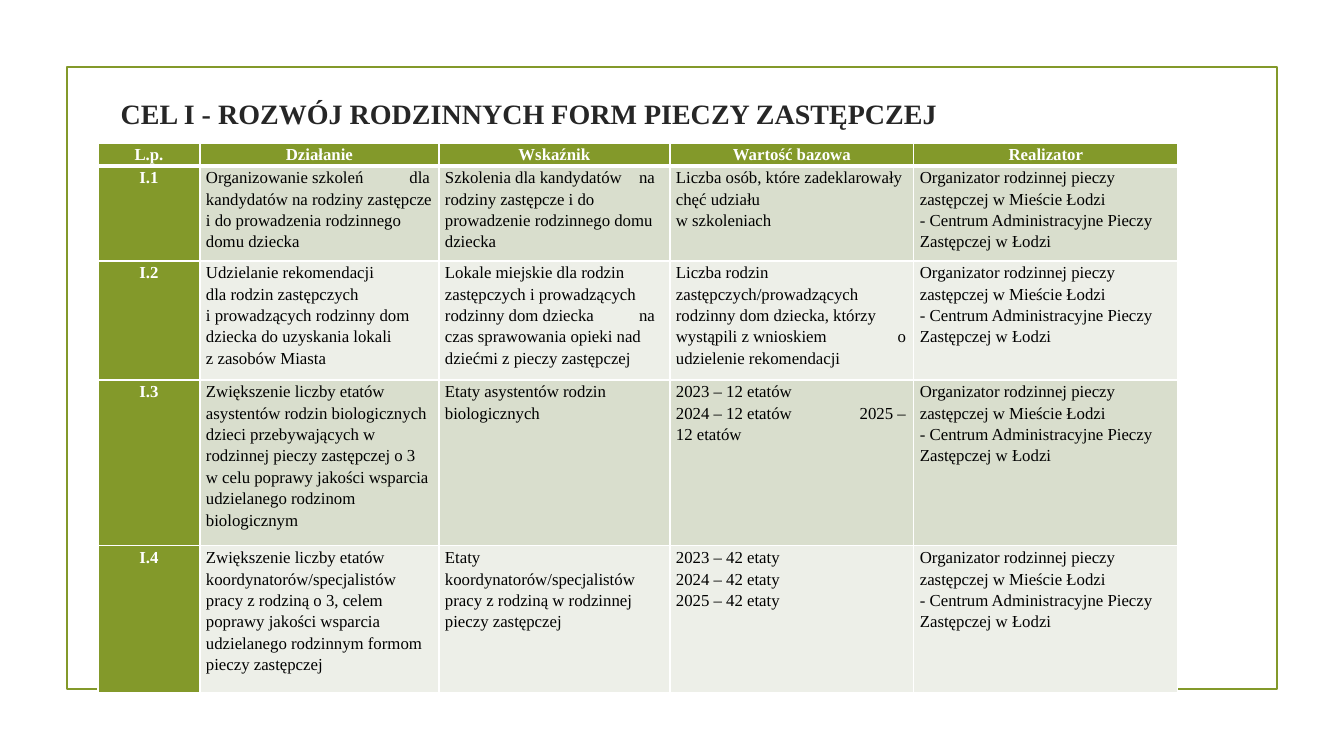
from lxml import etree
from pptx import Presentation
from pptx.dml.color import RGBColor
from pptx.enum import shapes, text
from pptx.oxml.ns import qn

PX = 914400 / 100.8
GREEN, WHITE = "83992A", "FFFFFF"
BANDS = ["D9DECD", "EDEFE8"]
COLS = [102, 239, 231, 244, 264]
ROWS = [23, 95, 119, 166, 147]
TABS = [0, 224, 210, 230, 0]
REALIZATOR = ("Organizator rodzinnej pieczy zastępczej w Mieście Łodzi\n"
              "- Centrum Administracyjne Pieczy Zastępczej w Łodzi")
TABLE = [
    ["L.p.", "Działanie", "Wskaźnik", "Wartość bazowa", "Realizator"],
    ["I.1",
     "Organizowanie szkoleń\tdla\nkandydatów na rodziny zastępcze i do prowadzenia rodzinnego domu dziecka",
     "Szkolenia dla kandydatów\tna\nrodziny zastępcze i do prowadzenie rodzinnego domu dziecka",
     "Liczba osób, które zadeklarowały chęć udziału\nw szkoleniach",
     REALIZATOR],
    ["I.2",
     "Udzielanie rekomendacji\ndla rodzin zastępczych\n"
     "i prowadzących rodzinny dom dziecka do uzyskania lokali\nz zasobów Miasta",
     "Lokale miejskie dla rodzin zastępczych i prowadzących rodzinny dom dziecka\tna\n"
     "czas sprawowania opieki nad dziećmi z pieczy zastępczej",
     "Liczba rodzin zastępczych/prowadzących rodzinny dom dziecka, którzy "
     "wystąpili z wnioskiem\to\nudzielenie rekomendacji",
     REALIZATOR],
    ["I.3",
     "Zwiększenie liczby etatów asystentów rodzin biologicznych dzieci przebywających w "
     "rodzinnej pieczy zastępczej o 3\nw celu poprawy jakości wsparcia udzielanego rodzinom biologicznym",
     "Etaty asystentów rodzin biologicznych",
     "2023 – 12 etatów\n2024 – 12 etatów\t2025 –\n12 etatów",
     REALIZATOR],
    ["I.4",
     "Zwiększenie liczby etatów koordynatorów/specjalistów pracy z rodziną o 3, celem "
     "poprawy jakości wsparcia udzielanego rodzinnym formom pieczy zastępczej",
     "Etaty koordynatorów/specjalistów pracy z rodziną w rodzinnej pieczy zastępczej",
     "2023 – 42 etaty\n2024 – 42 etaty\n2025 – 42 etaty",
     REALIZATOR],
]


def px(*values):
    return [round(v * PX) for v in values]


def write(tf, content, size=12, color="000000", bold=False, align=None, spacing=None, tab=0):
    """Fill a text frame, one paragraph per line, with an optional right tab stop in px."""
    for i, line in enumerate(content.split("\n")):
        p = tf.add_paragraph() if i else tf.paragraphs[0]
        if "\t" in line:
            tabs = etree.SubElement(p._p.get_or_add_pPr(), qn("a:tabLst"))
            etree.SubElement(tabs, qn("a:tab"), pos=str(px(tab)[0]), algn="r")
        p.alignment = align
        p.line_spacing = spacing
        r = p.add_run()
        r.text = line
        r.font.name, r.font.size, r.font.bold = "Times New Roman", size * 12700, bold
        r.font.color.rgb = RGBColor.from_string(color)


prs = Presentation()
prs.slide_width, prs.slide_height = px(1344, 756)
s = prs.slides.add_slide(prs.slide_layouts[5])

frame = s.shapes.add_shape(shapes.MSO_SHAPE.RECTANGLE, *px(67, 67, 1210, 622))
frame.shadow.inherit = False
frame.fill.background()
frame.line.color.rgb = RGBColor.from_string(GREEN)
frame.line.width = 15875

title = s.shapes.title
title.element.addprevious(frame.element)
title.left, title.top, title.width, title.height = px(0, 83, 1058, 60)
title.text_frame.vertical_anchor = text.MSO_ANCHOR.MIDDLE
write(title.text_frame, "CEL I - ROZWÓJ RODZINNYCH FORM PIECZY ZASTĘPCZEJ",
      size=20, color="262626", bold=True, align=text.PP_ALIGN.CENTER)

table = s.shapes.add_table(len(ROWS), len(COLS), *px(98, 143, sum(COLS), sum(ROWS))).table
table.first_row = table.horz_banding = False
for column, width in zip(table.columns, px(*COLS)):
    column.width = width
for row, height in zip(table.rows, px(*ROWS)):
    row.height = height

for i, entries in enumerate(TABLE):
    for j, entry in enumerate(entries):
        cell = table.cell(i, j)
        heading = i == 0 or j == 0
        cell.margin_left, cell.margin_right, cell.margin_top, cell.margin_bottom = px(6, 6, 0, 0)
        for side in "LRTB":
            thick = (i, side) in [(0, "B"), (1, "T")]
            ln = etree.SubElement(cell._tc.get_or_add_tcPr(), qn("a:ln" + side),
                                  w=str(38100 if thick else 12700))
            etree.SubElement(etree.SubElement(ln, qn("a:solidFill")), qn("a:srgbClr"), val=WHITE)
        cell.fill.solid()
        cell.fill.fore_color.rgb = RGBColor.from_string(GREEN if heading else BANDS[(i - 1) % 2])
        write(cell.text_frame, entry, color=WHITE if heading else "000000", bold=heading,
              align=text.PP_ALIGN.CENTER if heading else text.PP_ALIGN.LEFT,
              spacing=1.15, tab=TABS[j])

prs.save("out.pptx")
